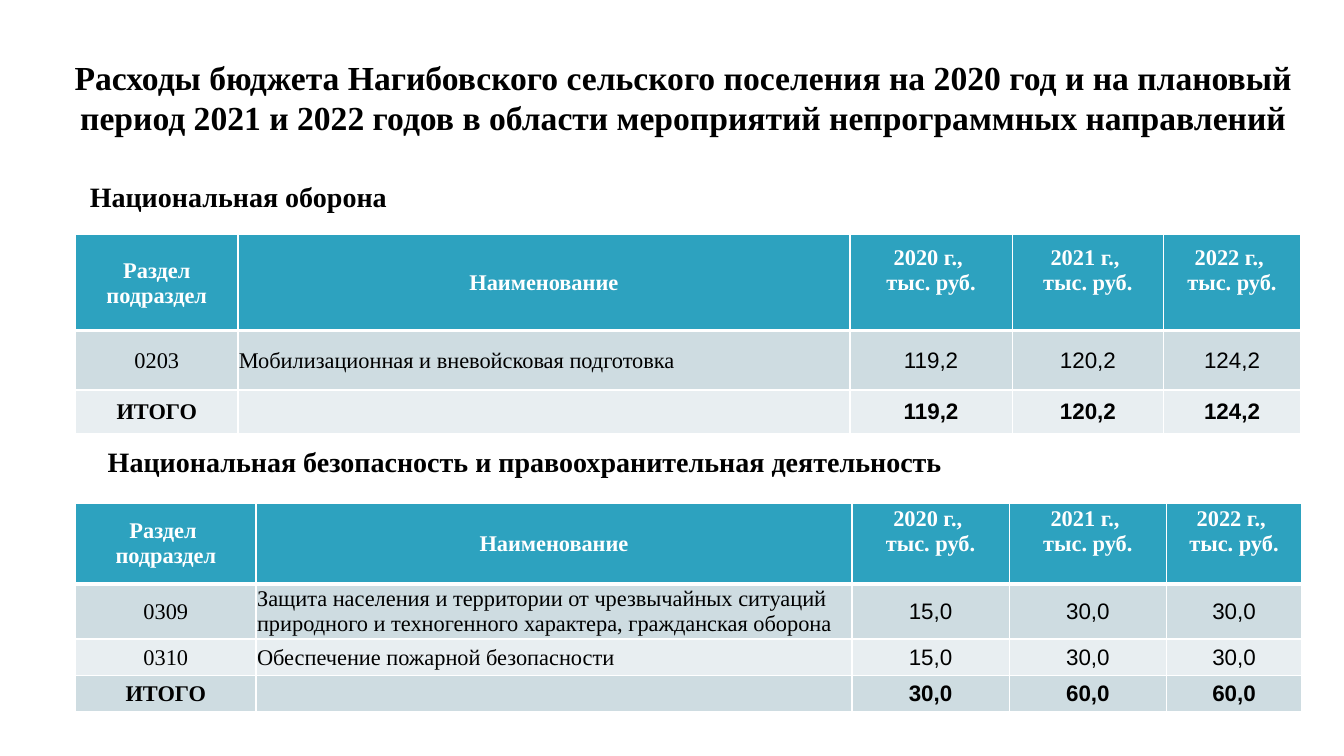
from dataclasses import dataclass

from lxml.etree import SubElement
from pptx import Presentation
from pptx.dml.color import RGBColor
from pptx.enum.text import MSO_ANCHOR, MSO_AUTO_SIZE, PP_ALIGN
from pptx.oxml.ns import qn
from pptx.util import Inches, Pt

SERIF, SANS = "Times New Roman", "Arial"
BLACK, WHITE = "000000", "FFFFFF"
HEADER_FILL = "2DA2BF"
BAND_FILLS = ("CEDCE1", "E8EEF1")
YEARS = [f"{year} г., \nтыс. руб." for year in (2020, 2021, 2022)]


@dataclass
class BudgetTable:
    top: float
    widths: list[float]
    heights: list[float]
    rows: list[list[str]]


TABLES = [
    BudgetTable(2.33, [1.61, 6.07, 1.61, 1.5, 1.36], [0.95, 0.59, 0.43], [
        ["Раздел подраздел", "Наименование", *YEARS],
        ["0203", "Мобилизационная и вневойсковая подготовка",
         "119,2", "120,2", "124,2"],
        ["ИТОГО", "", "119,2", "120,2", "124,2"],
    ]),
    BudgetTable(4.99, [1.79, 5.91, 1.56, 1.56, 1.34], [0.8, 0.55, 0.36, 0.36], [
        ["Раздел \nподраздел", "Наименование", *YEARS],
        ["0309", "Защита населения и территории от чрезвычайных ситуаций "
         "природного и техногенного характера, гражданская оборона",
         "15,0", "30,0", "30,0"],
        ["0310", "Обеспечение пожарной безопасности", "15,0", "30,0", "30,0"],
        ["ИТОГО", "", "30,0", "60,0", "60,0"],
    ]),
]


def color(value: str) -> RGBColor:
    return RGBColor.from_string(value)


def add_run(p, text: str, size: float, fill: str = BLACK,
            bold: bool = True, font: str = SERIF) -> None:
    r = p.add_run()
    r.text = text
    r.font.name = font
    r.font.size = Pt(size)
    r.font.bold = bold
    r.font.color.rgb = color(fill)


def place(sp, left: float, top: float, width: float, height: float) -> None:
    sp.left, sp.top = Inches(left), Inches(top)
    sp.width, sp.height = Inches(width), Inches(height)


def add_border(cell, side: str, points: float) -> None:
    ln = SubElement(cell._tc.get_or_add_tcPr(), qn(f"a:{side}"), w=str(Pt(points)))
    SubElement(SubElement(ln, qn("a:solidFill")), qn("a:srgbClr"), val=WHITE)


def fill_cell(cell, text: str, row: int, col: int) -> None:
    header = row == 0
    number = col >= 2 and not header
    for side in ("lnL", "lnR", "lnT", "lnB"):
        thick = (header and side == "lnB") or (row == 1 and side == "lnT")
        add_border(cell, side, 3 if thick else 1)
    cell.fill.solid()
    cell.fill.fore_color.rgb = color(HEADER_FILL if header else BAND_FILLS[(row - 1) % 2])
    cell.vertical_anchor = MSO_ANCHOR.MIDDLE
    cell.margin_left = cell.margin_right = cell.margin_top = Inches(0.01)
    cell.margin_bottom = Inches(0.25 if header and col >= 2 else 0)
    if not text:
        return
    tf = cell.text_frame
    for i, line in enumerate(text.split("\n")):
        p = tf.add_paragraph() if i else tf.paragraphs[0]
        p.alignment = PP_ALIGN.LEFT if col == 1 and not header else PP_ALIGN.CENTER
        add_run(p, line, 16, WHITE if header else BLACK,
                header or is_total(cell, row), SANS if number else SERIF)


def is_total(cell, row: int) -> bool:
    return row == len(cell._tc.tbl.tr_lst) - 1


def add_budget_table(s, spec_table: BudgetTable) -> None:
    t = spec_table
    table = s.shapes.add_table(
        len(t.rows), len(t.widths), Inches(0.75), Inches(t.top),
        Inches(sum(t.widths)), Inches(sum(t.heights))).table
    for column, width in zip(table.columns, t.widths):
        column.width = Inches(width)
    for i, (values, height) in enumerate(zip(t.rows, t.heights)):
        table.rows[i].height = Inches(height)
        for j, text in enumerate(values):
            fill_cell(table.cell(i, j), text, i, j)


def main() -> None:
    prs = Presentation()
    prs.slide_width, prs.slide_height = Inches(13.33), Inches(7.5)
    s = prs.slides.add_slide(prs.slide_layouts[1])

    title = s.shapes.title
    place(title, 0.44, 0.5, 12.67, 0.92)
    tf = title.text_frame
    tf.auto_size = MSO_AUTO_SIZE.NONE
    tf.vertical_anchor = MSO_ANCHOR.MIDDLE
    p = tf.paragraphs[0]
    p.alignment = PP_ALIGN.CENTER
    add_run(p, "Расходы бюджета Нагибовского сельского поселения на 2020 год и на "
            "плановый период 2021 и 2022 годов в области мероприятий "
            "непрограммных направлений", 24)

    body = s.placeholders[1]
    place(body, 0.44, 1.7, 12.69, 5.53)
    tf = body.text_frame
    tf.auto_size = MSO_AUTO_SIZE.NONE
    tf.margin_top = Inches(0.08)
    p = tf.paragraphs[0]
    pPr = p._p.get_or_add_pPr()
    pPr.set("marL", str(Inches(0.35)))
    pPr.set("indent", "0")
    SubElement(pPr, qn("a:buNone"))
    p.space_before = Pt(0)
    add_run(p, "Национальная оборона", 20)

    add_budget_table(s, TABLES[0])

    heading = s.shapes.add_textbox(Inches(0.97), Inches(4.33), Inches(8.48), Inches(0.43))
    tf = heading.text_frame
    tf.word_wrap = False
    tf.margin_top = Inches(0.08)
    add_run(tf.paragraphs[0],
            "Национальная безопасность и правоохранительная деятельность", 20)

    add_budget_table(s, TABLES[1])
    prs.save("out.pptx")


if __name__ == "__main__":
    main()
